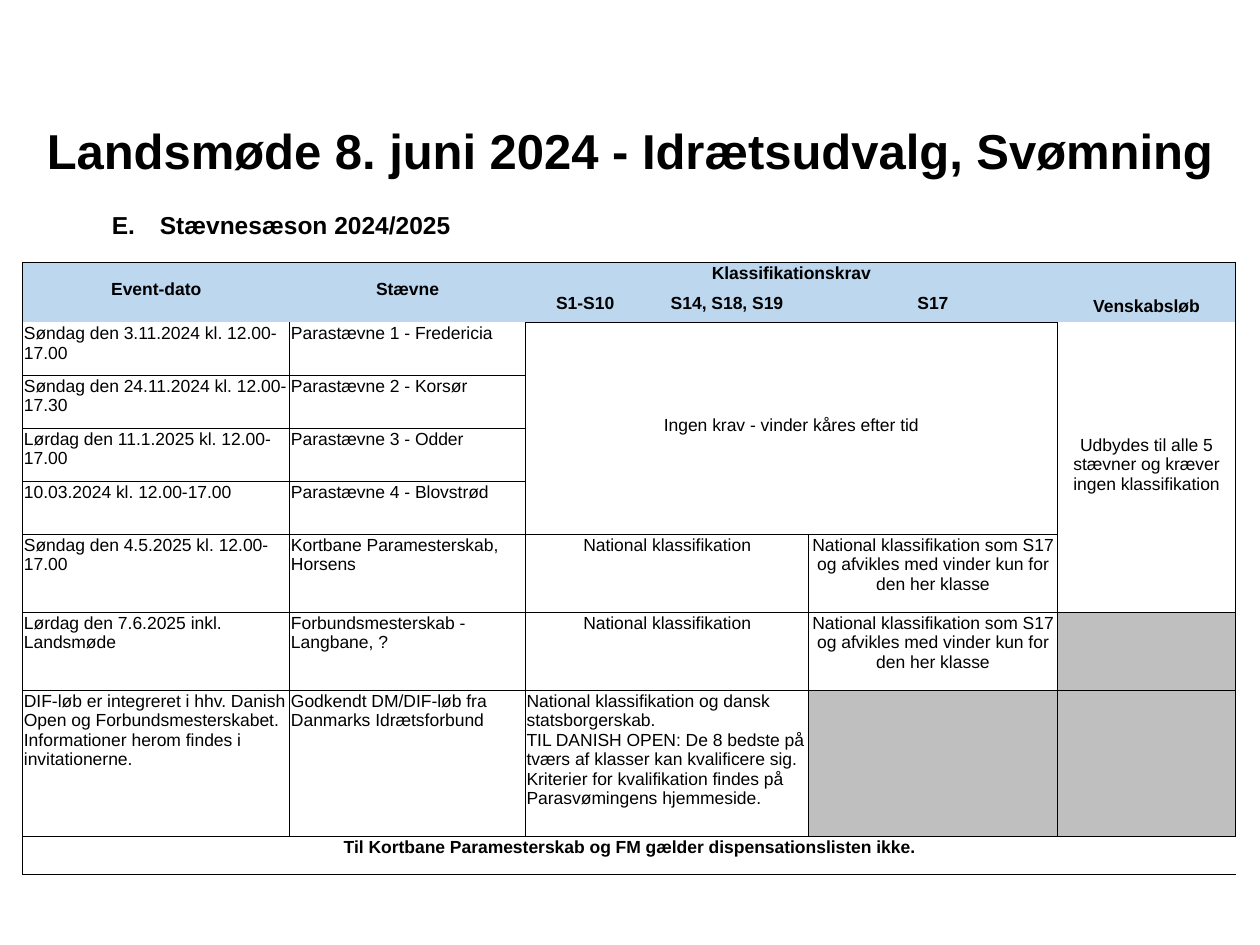
from lxml import etree
from pptx import Presentation
from pptx.dml.color import RGBColor
from pptx.enum.text import MSO_ANCHOR, MSO_AUTO_SIZE, PP_ALIGN
from pptx.oxml.ns import qn
from pptx.util import Inches, Pt

LEFT, CENTER = PP_ALIGN.LEFT, PP_ALIGN.CENTER
TOP, MIDDLE, BOTTOM = MSO_ANCHOR.TOP, MSO_ANCHOR.MIDDLE, MSO_ANCHOR.BOTTOM
FIXED = MSO_AUTO_SIZE.NONE
TITLE_ONLY = 5
FONT = "Arial"
COLORS = {"text": "000000", "header": "BDD7EE", "body": "FFFFFF",
          "closed": "BFBFBF", "border": "000000"}

COLUMNS = [2.12, 1.87, 0.95, 1.3, 1.97, 1.42]
ROWS = [0.24] * 2 + [0.42] * 4 + [0.62] * 2 + [1.16, 0.3]

# Headings: row, column, row span, column span, text, anchor, bordered sides
HEADINGS = [
    (0, 0, 2, 1, "Event-dato", MIDDLE, "LT"),
    (0, 1, 2, 1, "Stævne", MIDDLE, "T"),
    (0, 2, 1, 3, "Klassifikationskrav", TOP, "T"),
    (0, 5, 2, 1, "Venskabsløb", BOTTOM, "TR"),
    (1, 2, 1, 1, "S1-S10", TOP, "B"),
    (1, 3, 1, 1, "S14, S18, S19", TOP, "B"),
    (1, 4, 1, 1, "S17", TOP, "B"),
]
# Date and meet, one pair for each body row
MEETS = [
    ("Søndag den 3.11.2024 kl. 12.00-17.00", "Parastævne 1 - Fredericia"),
    ("Søndag den 24.11.2024 kl. 12.00-17.30", "Parastævne 2 - Korsør"),
    ("Lørdag den 11.1.2025 kl. 12.00-17.00", "Parastævne 3 - Odder"),
    ("10.03.2024 kl. 12.00-17.00", "Parastævne 4 - Blovstrød"),
    ("Søndag den 4.5.2025 kl. 12.00-17.00", "Kortbane Paramesterskab, Horsens"),
    ("Lørdag den 7.6.2025 inkl. Landsmøde", "Forbundsmesterskab - Langbane, ?"),
    ("DIF-løb er integreret i hhv. Danish Open og Forbundsmesterskabet. "
     "Informationer herom findes i invitationerne.",
     "Godkendt DM/DIF-løb fra Danmarks Idrætsforbund"),
]
NATIONAL = "National klassifikation"
NATIONAL_S17 = NATIONAL + " som S17 og afvikles med vinder kun for den her klasse"
DANISH_OPEN = (
    NATIONAL + " og dansk statsborgerskab.\n"
    "TIL DANISH OPEN: De 8 bedste på tværs af klasser kan kvalificere sig. "
    "Kriterier for kvalifikation findes på Parasvømingens hjemmeside.")
FRIENDLY = "Udbydes til alle 5 stævner og kræver ingen klassifikation"
CLOSED_CELLS = [(7, 5), (8, 4), (8, 5)]


def style_paragraph(para, size, bold, align):
    para.alignment = align
    para.font.name = FONT
    para.font.size = Pt(size)
    para.font.bold = bold
    para.font.color.rgb = RGBColor.from_string(COLORS["text"])


def add_title(page, text):
    title = page.shapes.title
    title.left, title.top = 0, Inches(0.91)
    title.width, title.height = Inches(10), Inches(0.57)
    frame = title.text_frame
    frame.text = text
    frame.auto_size = FIXED
    frame.vertical_anchor = TOP
    style_paragraph(frame.paragraphs[0], 28, True, CENTER)


def add_lettered_heading(page, text, number):
    box = page.shapes.add_textbox(Inches(0.29), Inches(1.62),
                                  Inches(9.53), Inches(0.34))
    box.text_frame.word_wrap = True
    para = box.text_frame.paragraphs[0]
    para.text = text
    para.level = 1
    properties = para._p.get_or_add_pPr()
    properties.set("marL", str(Inches(0.88)))
    properties.set("indent", str(-Inches(0.38)))
    etree.SubElement(properties, qn("a:buAutoNum"),
                     type="alphaUcPeriod", startAt=str(number))
    style_paragraph(para, 14, True, LEFT)


def set_borders(cell, sides):
    properties = cell._tc.get_or_add_tcPr()
    for side in "LRTB":
        line = etree.SubElement(properties, qn("a:ln" + side), w=str(Pt(0.5)))
        if side in sides:
            fill = etree.SubElement(line, qn("a:solidFill"))
            etree.SubElement(fill, qn("a:srgbClr"), val=COLORS["border"])
        else:
            etree.SubElement(line, qn("a:noFill"))


def fill_cell(table, row, column, text="", span=(1, 1), align=LEFT,
              anchor=TOP, color="body", sides="LRTB", bold=False):
    last_row, last_column = row + span[0] - 1, column + span[1] - 1
    # Each side is drawn only along the outer edge of the span
    for y in range(row, last_row + 1):
        for x in range(column, last_column + 1):
            outer = {"L": x == column, "R": x == last_column,
                     "T": y == row, "B": y == last_row}
            part = table.cell(y, x)
            part.margin_left = part.margin_right = Inches(0.01)
            part.margin_top, part.margin_bottom = Inches(0.01), Inches(0.05)
            set_borders(part, [side for side in sides if outer[side]])
            part.fill.solid()
            part.fill.fore_color.rgb = RGBColor.from_string(COLORS[color])
    cell = table.cell(row, column)
    if span != (1, 1):
        cell.merge(table.cell(last_row, last_column))
    cell.vertical_anchor = anchor
    cell.text = text
    for para in cell.text_frame.paragraphs:
        style_paragraph(para, 10, bold, align)


def add_season_table(page):
    frame = page.shapes.add_table(
        len(ROWS), len(COLUMNS), Inches(0.18), Inches(2.08),
        Inches(sum(COLUMNS)), Inches(sum(ROWS)))
    table = frame.table
    table.first_row = table.horz_banding = False
    for column, width in zip(table.columns, COLUMNS):
        column.width = Inches(width)
    for row, height in zip(table.rows, ROWS):
        row.height = Inches(height)

    # Header rows
    for row, column, height, width, text, anchor, sides in HEADINGS:
        fill_cell(table, row, column, text, (height, width), CENTER, anchor,
                  "header", sides, True)

    # Dates and meets
    for row, meet in enumerate(MEETS, start=2):
        for column, text in enumerate(meet):
            fill_cell(table, row, column, text,
                      sides="LRB" if row == 2 else "LRTB")

    # Classification requirements
    fill_cell(table, 2, 2, "Ingen krav - vinder kåres efter tid", (4, 3),
              CENTER, MIDDLE)
    for row in (6, 7):
        fill_cell(table, row, 2, NATIONAL, (1, 2), CENTER)
        fill_cell(table, row, 4, NATIONAL_S17, align=CENTER)
    fill_cell(table, 8, 2, DANISH_OPEN, (1, 2))

    # Friendly races and closed cells
    fill_cell(table, 2, 5, FRIENDLY, (5, 1), CENTER, MIDDLE, sides="LRB")
    for row, column in CLOSED_CELLS:
        fill_cell(table, row, column, color="closed")

    # Closing remark
    fill_cell(table, 9, 0,
              "Til Kortbane Paramesterskab og FM gælder dispensationslisten ikke.",
              (1, 6), CENTER, sides="LTB", bold=True)


def main():
    deck = Presentation()
    deck.slide_width, deck.slide_height = Inches(10), Inches(7.5)
    page = deck.slides.add_slide(deck.slide_layouts[TITLE_ONLY])
    add_title(page, "Landsmøde 8. juni 2024 - Idrætsudvalg, Svømning")
    add_lettered_heading(page, "Stævnesæson 2024/2025", 5)
    add_season_table(page)
    deck.save("out.pptx")


if __name__ == "__main__":
    main()
